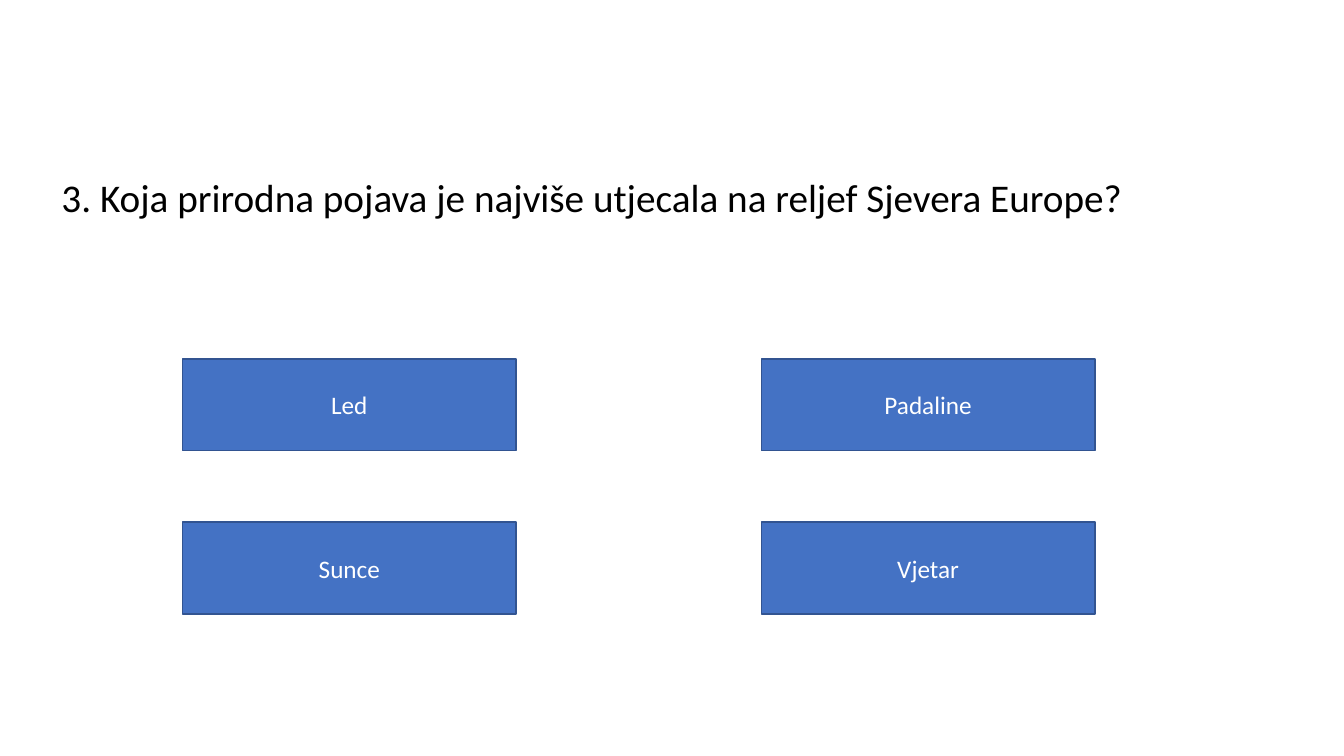
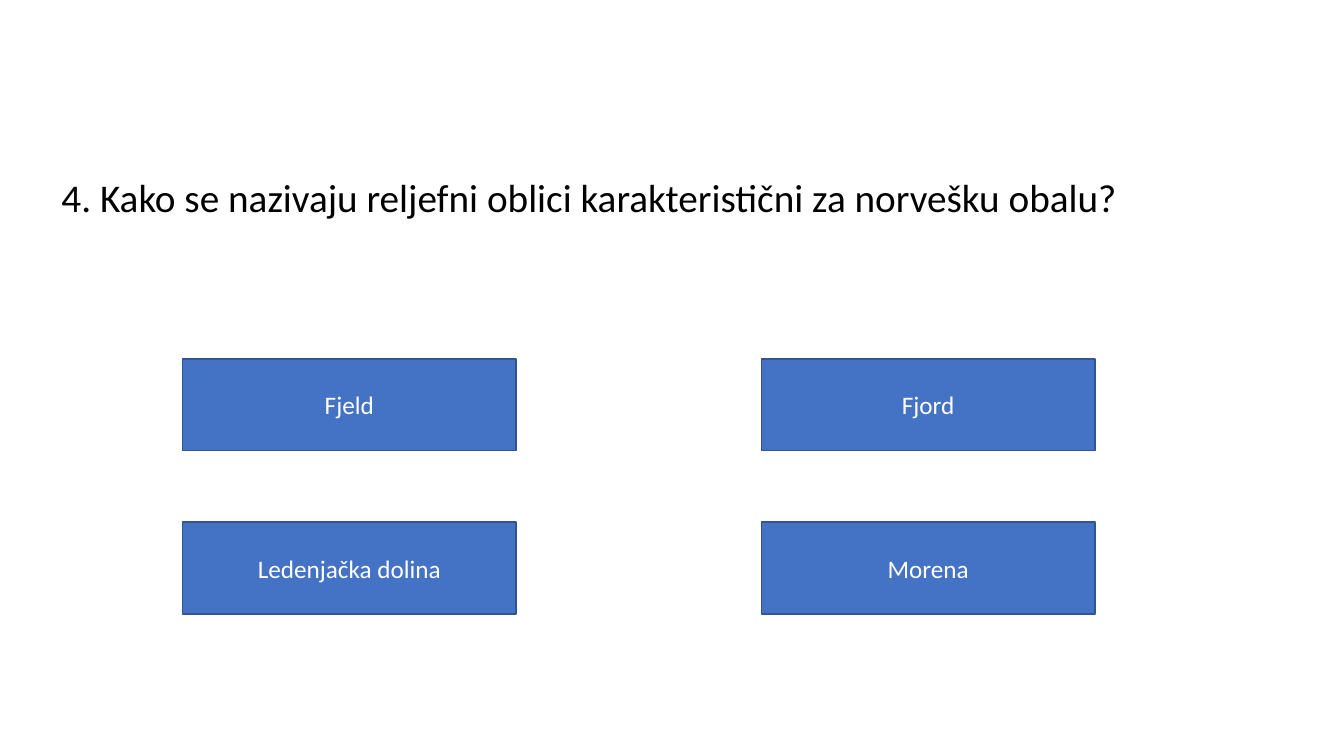
from dataclasses import dataclass
from typing import Any

from pptx import Presentation
from pptx.dml.color import RGBColor
from pptx.enum.shapes import MSO_SHAPE
from pptx.enum.text import MSO_ANCHOR, MSO_AUTO_SIZE, PP_ALIGN
from pptx.slide import Slide
from pptx.text.text import TextFrame
from pptx.util import Inches, Pt

FONT = "Calibri"
COLORS = {"background": "FFFFFF", "question": "000000", "answer": "FFFFFF",
          "fill": "4472C4", "line": "325491"}

QUESTION_BOX = (0.51, 1.67, 12.46, 0.57)
GRID_COLUMNS = 2
GRID_LEFT, GRID_TOP = 1.81, 3.56
COLUMN_STEP, ROW_STEP = 5.74, 1.62
ANSWER_WIDTH, ANSWER_HEIGHT = 3.31, 0.91

QUESTION_FRAME = {"word_wrap": True, "vertical_anchor": MSO_ANCHOR.TOP,
                  "auto_size": MSO_AUTO_SIZE.SHAPE_TO_FIT_TEXT}
ANSWER_FRAME = {"word_wrap": True, "vertical_anchor": MSO_ANCHOR.MIDDLE}


@dataclass(frozen=True)
class Question:
    text: str
    answers: tuple[str, ...]


QUESTIONS = (
    Question("3. Koja prirodna pojava je najviše utjecala na reljef Sjevera Europe?",
             ("Led", "Padaline", "Sunce", "Vjetar")),
    Question("4. Kako se nazivaju reljefni oblici karakteristični za norvešku obalu?",
             ("Fjeld", "Fjord", "Ledenjačka dolina", "Morena")),
)


def color(name: str) -> RGBColor:
    return RGBColor.from_string(COLORS[name])


def apply_format(target: Any, values: dict[str, Any]) -> None:
    for name, value in values.items():
        setattr(target, name, value)


def write_text(frame: TextFrame, text: str, frame_format: dict[str, Any],
               alignment: PP_ALIGN, size: int, color_name: str) -> None:
    apply_format(frame, frame_format)
    paragraph = frame.paragraphs[0]
    paragraph.alignment = alignment
    run = paragraph.add_run()
    run.text = text
    apply_format(run.font, {"name": FONT, "size": Pt(size)})
    run.font.color.rgb = color(color_name)


def add_question(slide: Slide, text: str) -> None:
    title = slide.shapes.title
    box = map(Inches, QUESTION_BOX)
    apply_format(title, dict(zip(("left", "top", "width", "height"), box)))
    write_text(title.text_frame, text, QUESTION_FRAME, PP_ALIGN.LEFT, 28, "question")


def add_answer(slide: Slide, text: str, row: int, column: int) -> None:
    shape = slide.shapes.add_shape(
        MSO_SHAPE.RECTANGLE,
        Inches(GRID_LEFT + column * COLUMN_STEP),
        Inches(GRID_TOP + row * ROW_STEP),
        Inches(ANSWER_WIDTH),
        Inches(ANSWER_HEIGHT),
    )
    shape.shadow.inherit = False
    shape.fill.solid()
    shape.fill.fore_color.rgb = color("fill")
    shape.line.color.rgb = color("line")
    shape.line.width = Pt(1)
    write_text(shape.text_frame, text, ANSWER_FRAME, PP_ALIGN.CENTER, 18, "answer")


def main() -> None:
    presentation = Presentation()
    presentation.slide_width = Inches(13.33)
    presentation.slide_height = Inches(7.5)
    background = presentation.slide_master.background.fill
    background.solid()
    background.fore_color.rgb = color("background")
    title_only = presentation.slide_layouts.get_by_name("Title Only")
    for question in QUESTIONS:
        slide = presentation.slides.add_slide(title_only)
        add_question(slide, question.text)
        for index, answer in enumerate(question.answers):
            add_answer(slide, answer, *divmod(index, GRID_COLUMNS))
    presentation.save("out.pptx")


if __name__ == "__main__":
    main()
